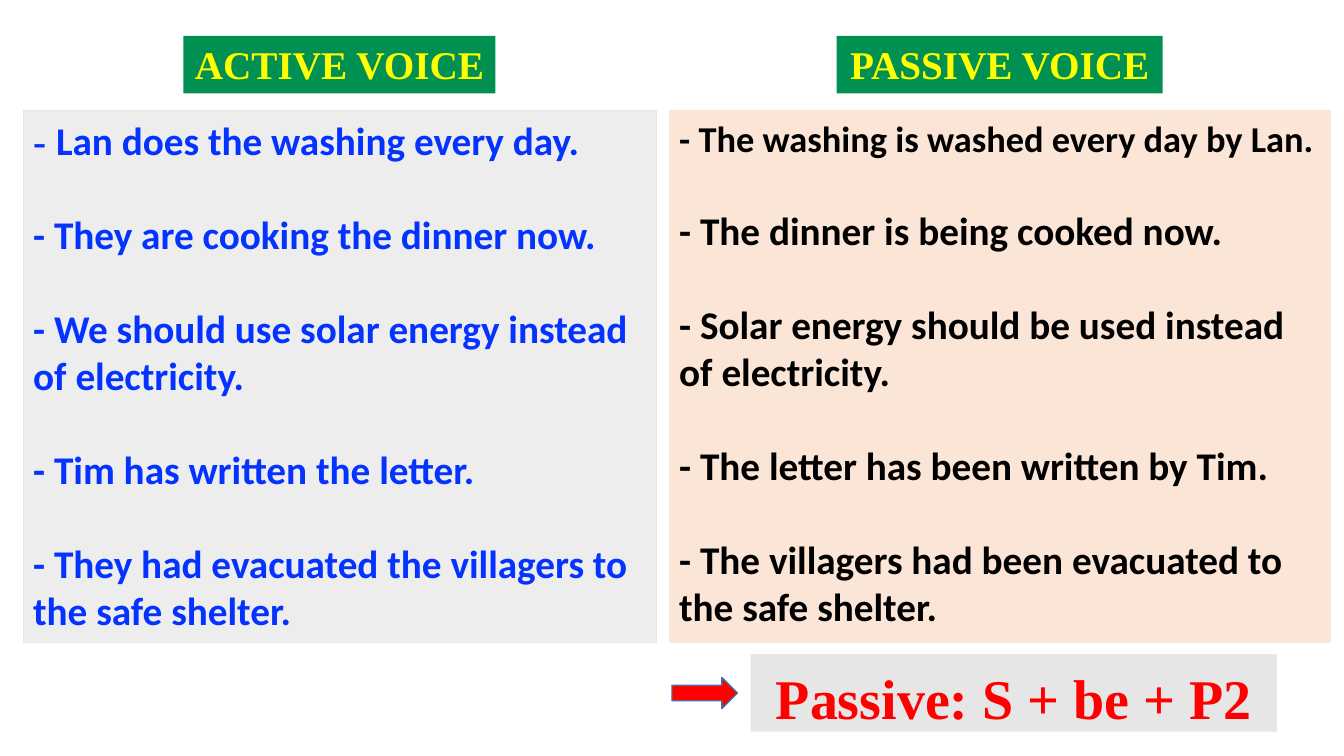
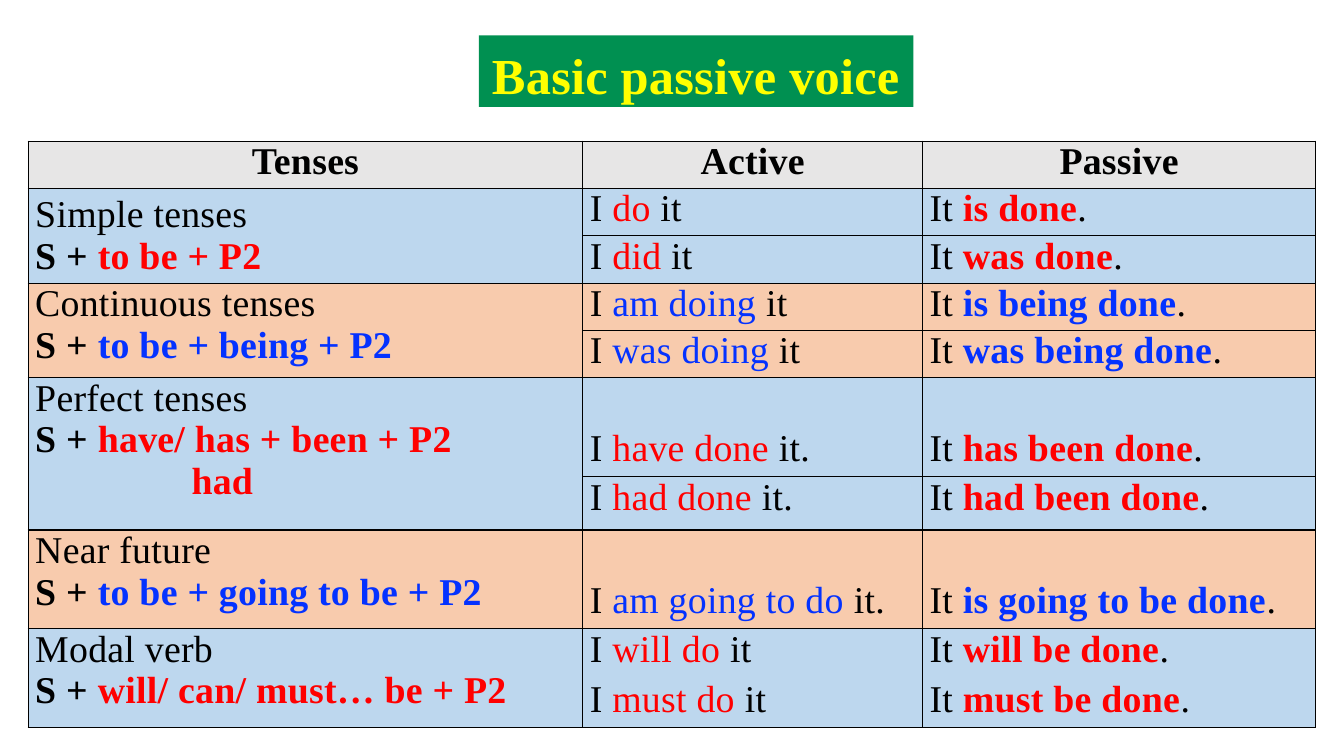
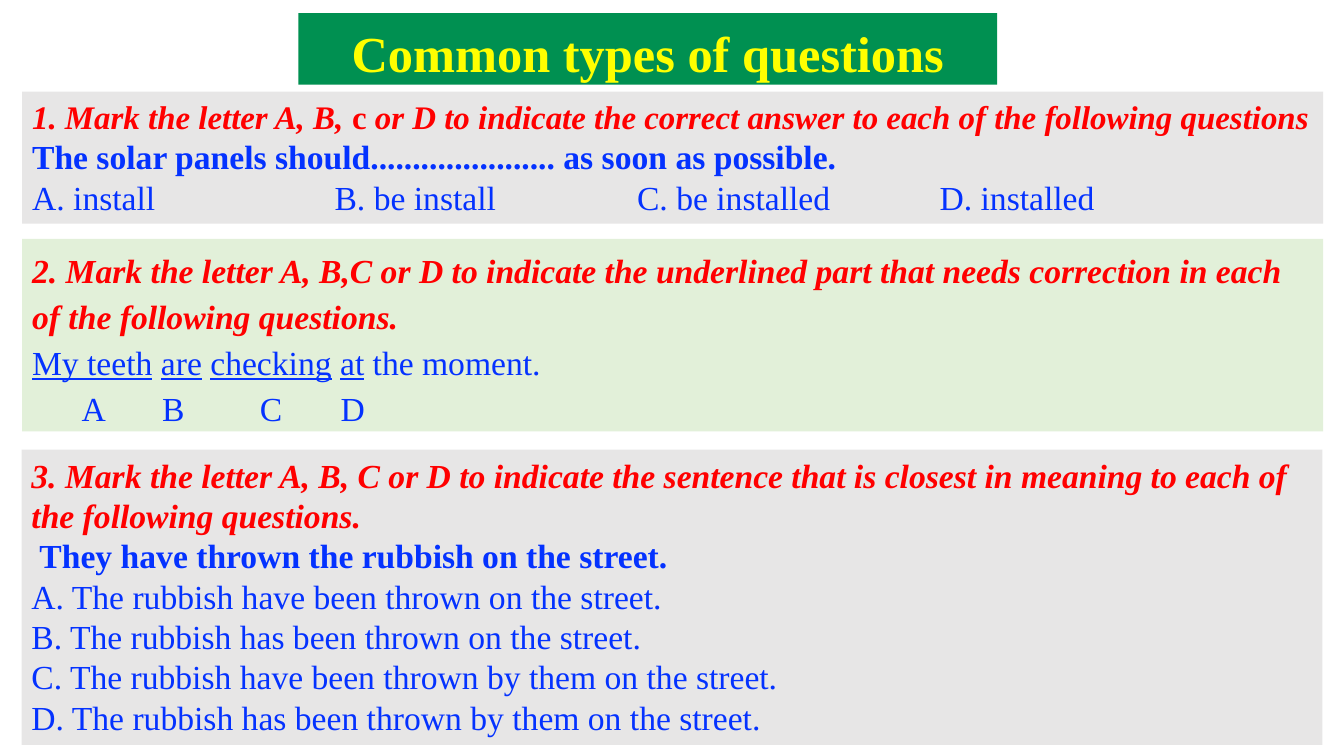
from typing import NamedTuple

from lxml import etree
from pptx import Presentation
from pptx.dml.color import RGBColor
from pptx.enum.shapes import MSO_SHAPE as Shape
from pptx.enum.text import MSO_ANCHOR as Anchor, PP_ALIGN as Align
from pptx.oxml.ns import qn
from pptx.util import Inches, Pt

GREEN = RGBColor(0x00, 0x90, 0x51)
YELLOW = RGBColor(0xFF, 0xFF, 0x00)
BLUE = RGBColor(0x04, 0x32, 0xFF)
RED = RGBColor(0xFF, 0x00, 0x00)
BLACK = RGBColor(0x00, 0x00, 0x00)
GREY = RGBColor(0xE7, 0xE6, 0xE6)
LIGHT_GREY = RGBColor(0xED, 0xED, 0xED)
PEACH = RGBColor(0xFB, 0xE5, 0xD6)
MINT = RGBColor(0xE2, 0xF0, 0xD9)
SKY = RGBColor(0xBD, 0xD7, 0xEE)
ORANGE = RGBColor(0xF8, 0xCB, 0xAD)
STEEL = RGBColor(0x43, 0x73, 0x9E)
SERIF, SANS = "Times New Roman", "Calibri"
TITLE_LEADING = 1.28

ACTIVE = [
    "|- |Lan does the washing every day.",
    "- They are cooking the dinner now.",
    "- We should use solar energy instead of electricity.",
    "- Tim has written the letter.",
    "- They had evacuated the villagers to the safe shelter.",
]
PASSIVE = [
    "- The washing is washed every day by Lan.",
    "- The dinner is being cooked now.",
    "- Solar energy should be used instead of electricity.",
    "- The letter has been written by Tim.",
    "- The villagers had been evacuated to the safe shelter.",
]
HEADERS = ["Tenses", "Active", "Passive"]
COLUMN_SHARES = [43.07, 26.39, 30.54]
ROW_WEIGHTS = [0.47] * 5 + [0.98, 0.53, 0.98, 0.98]
LOW_ROWS = (5, 7)
TENSES = [
    (["Simple tenses", "S + |to be + P2|"],
     [(["I |do| it"], ["It |is done|."]),
      (["I |did| it"], ["It |was done|."])]),
    (["Continuous tenses", "S + |to be + being + P2|"],
     [(["I |am doing |it"], ["It |is being done|."]),
      (["I |was doing |it"], ["It |was being done|."])]),
    (["Perfect tenses", "S + |have/ has + been + P2|", "|had|"],
     [(["I |have done |it."], ["It |has been done|."]),
      (["I |had done |it."], ["It |had been done|."])]),
    (["Near future", "S + |to be + going to be + P2|"],
     [(["I |am going to do |it."], ["It |is going to be done|."])]),
    (["Modal verb", "S + |will/ can/ must… be + P2|"],
     [(["I |will do |it", "I |must do |it"],
       ["It |will be done|.", "It |must be done|."])]),
]


class Box(NamedTuple):
    """A region of a slide in EMU."""
    x: int
    y: int
    w: int
    h: int

    def area(self, x, y, w, h):
        """Return the region at the given percentages of this one."""
        return Box(int(self.x + self.w * x / 100), int(self.y + self.h * y / 100),
                   int(self.w * w / 100), int(self.h * h / 100))


PAGE = Box(0, 0, Inches(13.33), Inches(7.5))


def style_run(r, size, color, font, bold, italic, underline, spacing):
    """Format one run."""
    r.font.size, r.font.name = Pt(size), font
    r.font.bold, r.font.italic, r.font.underline = bold, italic, underline
    r.font.color.rgb = color
    if spacing:
        r._r.get_or_add_rPr().set("spc", str(spacing))


def write(tf, text, size=24, color=BLACK, font=SERIF, bold=False, italic=False,
          underline=False, spacing=0, accent=None, align=Align.LEFT,
          leading=1.2, before=0, indent=0, tabs=()):
    """Add a paragraph in which pieces between bars take the accent format."""
    p = tf.paragraphs[0]
    if p.runs:
        p = tf.add_paragraph()
        p.space_before = Pt(before)
    pPr = p._p.get_or_add_pPr()
    if indent:
        pPr.set("marL", str(Inches(indent)))
    if tabs:
        tab_list = etree.SubElement(pPr, qn("a:tabLst"))
        for stop in tabs:
            etree.SubElement(tab_list, qn("a:tab"), pos=str(Inches(stop)), algn="l")
    p.alignment = align
    p.line_spacing = Pt(round(size * leading, 1))
    base = dict(size=size, color=color, font=font, bold=bold, italic=italic,
                underline=underline, spacing=spacing)
    for i, piece in enumerate(text.split("|")):
        if piece:
            r = p.add_run()
            r.text = piece
            style_run(r, **(base | (accent or {}) if i % 2 else base))


def add_panel(s, box, fill, line=None, wrap=True):
    """Add a filled text box and return its text frame."""
    sp = s.shapes.add_textbox(*box)
    sp.fill.solid()
    sp.fill.fore_color.rgb = fill
    if line:
        sp.line.color.rgb = line
        sp.line.width = Pt(0.75)
    sp.text_frame.word_wrap = wrap
    return sp.text_frame


def add_banner(s, box, text, **fmt):
    """Add a green heading band with yellow text."""
    tf = add_panel(s, box, GREEN, wrap=False)
    write(tf, text, color=YELLOW, bold=True, align=Align.CENTER, **fmt)


def add_voice_column(s, box, title, sentences, fill, line, color, first_size):
    """Add a heading above a panel of example sentences."""
    add_banner(s, box.area(25.3, 0, 49.3, 9.5), title, size=28)
    tf = add_panel(s, box.area(0, 12.4, 100, 87.6), fill, line)
    for i, sentence in enumerate(sentences):
        write(tf, sentence, size=28 if i else first_size, color=color, font=SANS,
              bold=True, before=33.6, accent=dict(font=SERIF))


def add_conclusion(s, box, text):
    """Add an arrow that points to the rule."""
    tf = add_panel(s, box.area(13, 0, 87, 100), GREY)
    write(tf, text, size=40, color=RED, bold=True, align=Align.CENTER,
          leading=TITLE_LEADING)
    arrow = s.shapes.add_shape(Shape.RIGHT_ARROW, *box.area(0, 30, 10.83, 40))
    arrow.shadow.inherit = False
    arrow.fill.solid()
    arrow.fill.fore_color.rgb = RED
    arrow.line.color.rgb = STEEL
    arrow.line.width = Pt(1)


def add_borders(cell):
    """Draw a thin black line on each side of a cell."""
    tcPr = cell._tc.get_or_add_tcPr()
    for i, side in enumerate("LRTB"):
        ln = etree.Element(qn(f"a:ln{side}"), w=str(Pt(1)))
        fill = etree.SubElement(ln, qn("a:solidFill"))
        etree.SubElement(fill, qn("a:srgbClr"), val=str(BLACK))
        tcPr.insert(i, ln)


def format_cell(cell, fill):
    """Set the fill, insets and borders of a cell."""
    cell.fill.solid()
    cell.fill.fore_color.rgb = fill
    cell.margin_left = cell.margin_right = Inches(0.07)
    cell.margin_top = cell.margin_bottom = 0
    add_borders(cell)


def write_cell(cell, text, **fmt):
    """Add a paragraph in the table's text style."""
    write(cell.text_frame, text, size=27, spacing=20, leading=1.1, **fmt)


def add_tense_table(s, box):
    """Add the table of active and passive forms by tense."""
    table = s.shapes.add_table(len(ROW_WEIGHTS), len(HEADERS), *box).table
    table.first_row = table.horz_banding = False
    for column, share in zip(table.columns, COLUMN_SHARES):
        column.width = int(box.w * share / 100)
    for row, weight in zip(table.rows, ROW_WEIGHTS):
        row.height = int(box.h * weight / sum(ROW_WEIGHTS))
    for col, header in enumerate(HEADERS):
        format_cell(table.cell(0, col), GREY)
        write_cell(table.cell(0, col), header, bold=True, align=Align.CENTER)
    top = 1
    for i, (label, examples) in enumerate(TENSES):
        fill, color = ((SKY, RED), (ORANGE, BLUE))[i % 2]
        for row, forms in enumerate(examples, top):
            format_cell(table.cell(row, 0), fill)
            for col, lines in enumerate(forms, 1):
                cell = table.cell(row, col)
                format_cell(cell, fill)
                if row in LOW_ROWS:
                    cell.vertical_anchor = Anchor.BOTTOM
                    cell.margin_bottom = Inches(0.07)
                for line in lines:
                    write_cell(cell, line, before=6,
                               accent=dict(color=color, bold=col == 2))
        name = table.cell(top, 0)
        if len(examples) > 1:
            name.merge(table.cell(top + len(examples) - 1, 0))
        name.vertical_anchor = Anchor.TOP if i else Anchor.MIDDLE
        for n, line in enumerate(label):
            write_cell(name, line, bold=n > 0, indent=1.55 if n == 2 else 0,
                       accent=dict(color=color))
        top += len(examples)


def add_question(s, box, fill, task, lines, **task_fmt):
    """Add a panel with a red task and its blue lines."""
    tf = add_panel(s, box, fill)
    write(tf, task, color=RED, bold=True, italic=True,
          accent=dict(italic=False), **task_fmt)
    for text, fmt in lines:
        write(tf, text, color=BLUE, **fmt)


def build_voices(s):
    """Compare active and passive sentences."""
    add_voice_column(s, PAGE.area(1.73, 4.73, 47.1, 80.2), "ACTIVE VOICE",
                     ACTIVE, LIGHT_GREY, GREY, BLUE, 28)
    add_voice_column(s, PAGE.area(49.8, 4.73, 49.2, 80.2), "PASSIVE VOICE",
                     PASSIVE, PEACH, PEACH, BLACK, 26)
    add_conclusion(s, PAGE.area(50, 86.53, 45, 10.27), "Passive: S + be + P2")


def build_tenses(s):
    """Show the passive in each tense."""
    add_banner(s, PAGE.area(35.63, 4.67, 32.33, 9.47), "Basic passive voice",
               size=36, spacing=20, leading=TITLE_LEADING)
    add_tense_table(s, PAGE.area(2.1, 18.67, 95.8, 77.6))


def build_questions(s):
    """Show three types of exam question."""
    add_banner(s, PAGE.area(22.2, 1.73, 52, 9.47), "Common types of questions",
               size=36, leading=TITLE_LEADING)
    loose = dict(leading=1.37)
    add_question(
        s, PAGE.area(1.65, 12.13, 96.8, 17.47), GREY,
        "1. Mark the letter A, B,| c |or D to indicate the correct answer "
        "to each of the following questions",
        [("The solar panels should...................... as soon as possible.",
          dict(bold=True)),
         ("A. install\tB. be install\tC. be installed\tD. installed",
          dict(tabs=(3, 6, 9)))],
        size=23.5)
    add_question(
        s, PAGE.area(1.65, 31.6, 96.8, 25.47), MINT,
        "2. Mark the letter A, B,C or D to indicate the underlined part that "
        "needs correction in each of the following questions.",
        [("|My teeth| |are| |checking| |at| the moment.",
          dict(accent=dict(underline=True), **loose)),
         ("\tA\tB\tC\tD", dict(tabs=(0.49, 1.29, 2.26, 3.06), **loose))],
        **loose)
    add_question(
        s, PAGE.area(1.6, 59.47, 96.8, 39.07), GREY,
        "3. Mark the letter A, B, C or D to indicate the sentence that is "
        "closest in meaning to each of the following questions.",
        [("They have thrown the rubbish on the street.",
          dict(bold=True, indent=0.08)),
         ("A. The rubbish have been thrown on the street.", {}),
         ("B. The rubbish has been thrown on the street.", {}),
         ("C. The rubbish have been thrown by them on the street.", {}),
         ("D. The rubbish has been thrown by them on the street.", {})])


def main():
    """Build and save the presentation."""
    prs = Presentation()
    prs.slide_width, prs.slide_height = PAGE.w, PAGE.h
    for build in (build_voices, build_tenses, build_questions):
        build(prs.slides.add_slide(prs.slide_layouts[6]))
    prs.save("out.pptx")


if __name__ == "__main__":
    main()
